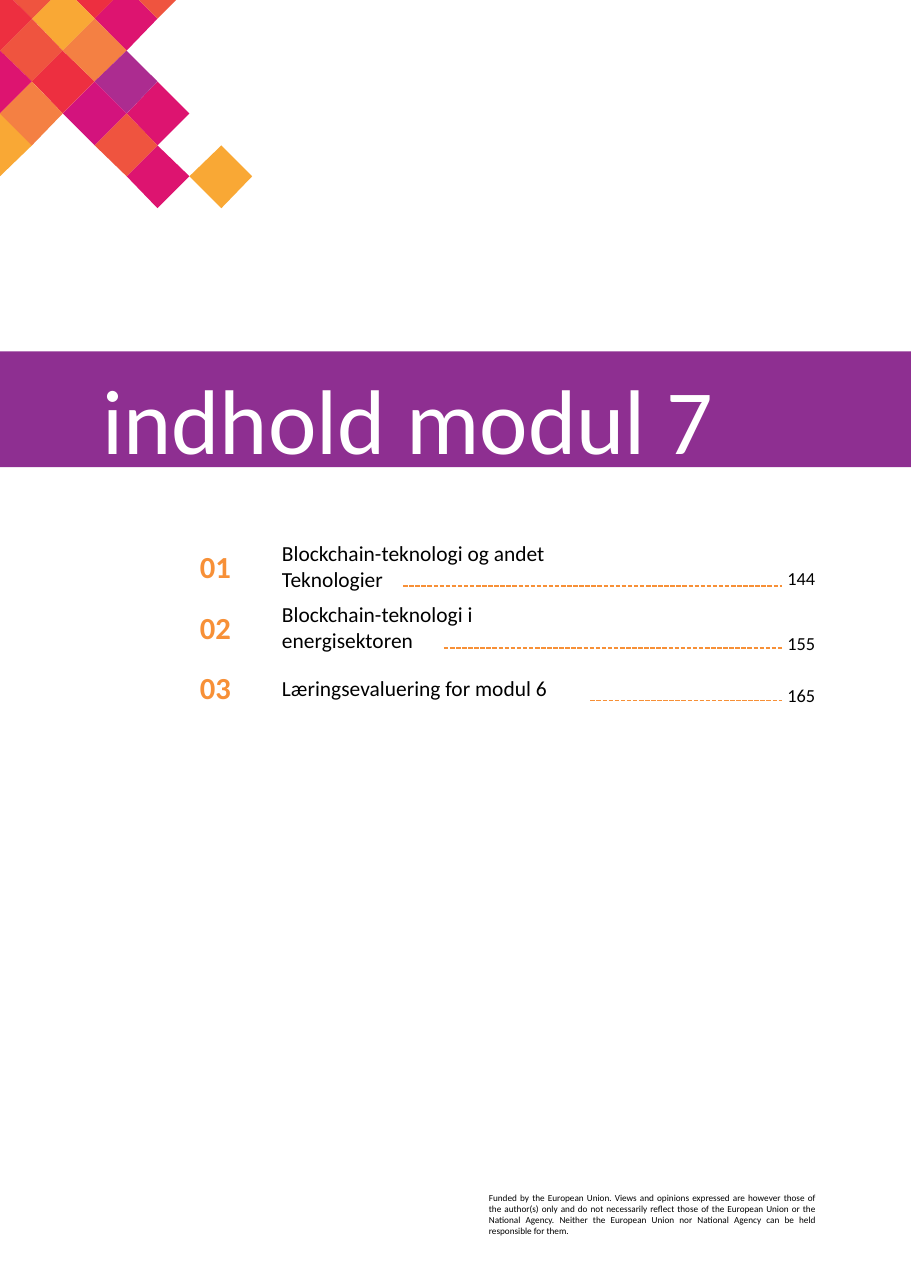
import pptx
import pptx.dml.color
import pptx.enum.dml
import pptx.enum.shapes
import pptx.enum.text
import pptx.oxml
import pptx.oxml.ns
import pptx.util

PX = 9144
ALIGN = pptx.enum.text.PP_ALIGN
ANCHOR = pptx.enum.text.MSO_ANCHOR
FIT = pptx.enum.text.MSO_AUTO_SIZE

THEME = {
    "font": "Calibri",
    "colors": {
        "band": "8E2F91", "accent": "F79037", "text": "000000", "white": "FFFFFF",
        "red": "ED2F40", "pink": "DD1470", "coral": "EF543F", "amber": "F9A835",
        "orange": "F48043", "purple": "AC2C90", "magenta": "D3137D",
    },
    "styles": {
        "title": {"size": 60, "bold": False, "color": "white", "align": ALIGN.LEFT, "anchor": ANCHOR.TOP},
        "number": {"size": 20, "bold": True, "color": "accent", "align": ALIGN.CENTER, "anchor": ANCHOR.MIDDLE},
        "entry": {"size": 14, "bold": False, "color": "text", "align": ALIGN.LEFT, "anchor": ANCHOR.MIDDLE},
        "page": {"size": 12, "bold": False, "color": "text", "align": ALIGN.RIGHT, "anchor": ANCHOR.MIDDLE},
        "footer": {"size": 6, "bold": False, "color": "text", "align": ALIGN.JUSTIFY, "anchor": ANCHOR.TOP},
    },
}


def color(name):
    return pptx.dml.color.RGBColor.from_string(THEME["colors"][name])


def write(sp, box, lines, style):
    fmt = THEME["styles"][style]
    for name, value in zip(("left", "top", "width", "height"), box):
        setattr(sp, name, value * PX)
    tf = sp.text_frame
    frame = {"word_wrap": True, "auto_size": FIT.NONE, "vertical_anchor": fmt["anchor"]}
    for name, value in frame.items():
        setattr(tf, name, value)
    for i, line in enumerate(lines):
        p = tf.add_paragraph() if i else tf.paragraphs[0]
        para = {"alignment": fmt["align"], "space_before": pptx.util.Pt(0)}
        for name, value in para.items():
            setattr(p, name, value)
        if sp.is_placeholder:
            pPr = p._p.get_or_add_pPr()
            pPr.set("marL", "0")
            pPr.set("indent", "0")
            pPr.append(pptx.oxml.parse_xml("<a:buNone %s/>" % pptx.oxml.ns.nsdecls("a")))
        r = p.add_run()
        r.text = line
        font = {"name": THEME["font"], "size": pptx.util.Pt(fmt["size"]), "bold": fmt["bold"]}
        for name, value in font.items():
            setattr(r.font, name, value)
        r.font.color.rgb = color(fmt["color"])


prs = pptx.Presentation()
prs.slide_width = 827 * PX
prs.slide_height = 1169 * PX
slide = prs.slides.add_slide(prs.slide_layouts[4])
shapes = slide.shapes
title, *bodies = slide.placeholders
spare = bodies.pop()
spare._element.getparent().remove(spare._element)

band = shapes.add_shape(pptx.enum.shapes.MSO_SHAPE.RECTANGLE, 0, 319 * PX, 827 * PX, 105 * PX)
band.shadow.inherit = False
band.fill.solid()
band.fill.fore_color.rgb = color("band")
band.line.fill.background()

HALF = 28.65
FIRST_ROW = 17
TILES = [
    (3, -1, "red"), (4, 0, "pink"), (5, -1, "coral"), (2, 0, "amber"),
    (1, 1, "coral"), (2, 2, "red"), (3, 1, "orange"), (0, 2, "pink"),
    (0, 4, "amber"), (1, 3, "orange"), (7, 5, "amber"), (5, 5, "pink"),
    (5, 3, "pink"), (4, 2, "purple"), (3, 3, "magenta"), (4, 4, "coral"),
    (1, -1, "coral"), (0, 0, "red"),
]
for col, row, name in TILES:
    cx, cy = col * HALF, FIRST_ROW + row * HALF
    levels = [max(0, y) for y in (cy - HALF, cy, cy + HALF)]
    spans = [(y, HALF - abs(y - cy)) for y in levels]
    outline = [(cx + w, y) for y, w in spans] + [(cx - w, y) for y, w in reversed(spans)]
    points = list(dict.fromkeys((max(0, round(x)), round(y)) for x, y in outline))
    builder = shapes.build_freeform(*points[0], scale=PX)
    builder.add_line_segments(points[1:], close=True)
    tile = builder.convert_to_shape()
    tile.shadow.inherit = False
    tile.fill.solid()
    tile.fill.fore_color.rgb = color(name)
    tile.line.fill.background()

write(shapes.add_textbox(0, 0, 0, 0), (434, 1077, 316, 50), [
    "Funded by the European Union. Views and opinions expressed are however those of "
    "the author(s) only and do not necessarily reflect those of the European Union or the "
    "National Agency. Neither the European Union nor National Agency can be held "
    "responsible for them."], "footer")

ROWS = [
    (["Blockchain-teknologi og andet", "Teknologier"], 435, "144", 506, 366, 532),
    (["Blockchain-teknologi i", "energisektoren"], 388, "155", 565, 403, 588),
    (["Læringsevaluering for modul 6"], 388, "165", 612, 536, 636),
]
for i, (lines, width, page, page_top, dash_left, dash_y) in enumerate(ROWS):
    top = 495 + 55 * i
    write(shapes.add_textbox(0, 0, 0, 0), (160, top, 71, 38), ["%02d" % (i + 1)], "number")
    write(bodies[i], (246, top, width, 38), lines, "entry")
    write(shapes.add_textbox(0, 0, 0, 0), (700, page_top, 50, 38), [page], "page")
    dash = shapes.add_connector(pptx.enum.shapes.MSO_CONNECTOR.STRAIGHT,
                                dash_left * PX, dash_y * PX, 710 * PX, dash_y * PX)
    dash.line.color.rgb = color("accent")
    line = {"width": pptx.util.Pt(1), "dash_style": pptx.enum.dml.MSO_LINE.SQUARE_DOT}
    for name, value in line.items():
        setattr(dash.line, name, value)
    dash._element.spPr.append(pptx.oxml.parse_xml("<a:effectLst %s/>" % pptx.oxml.ns.nsdecls("a")))

write(title, (83, 324, 700, 106), ["indhold modul 7"], "title")
shapes._spTree.append(title._element)

prs.save("out.pptx")
